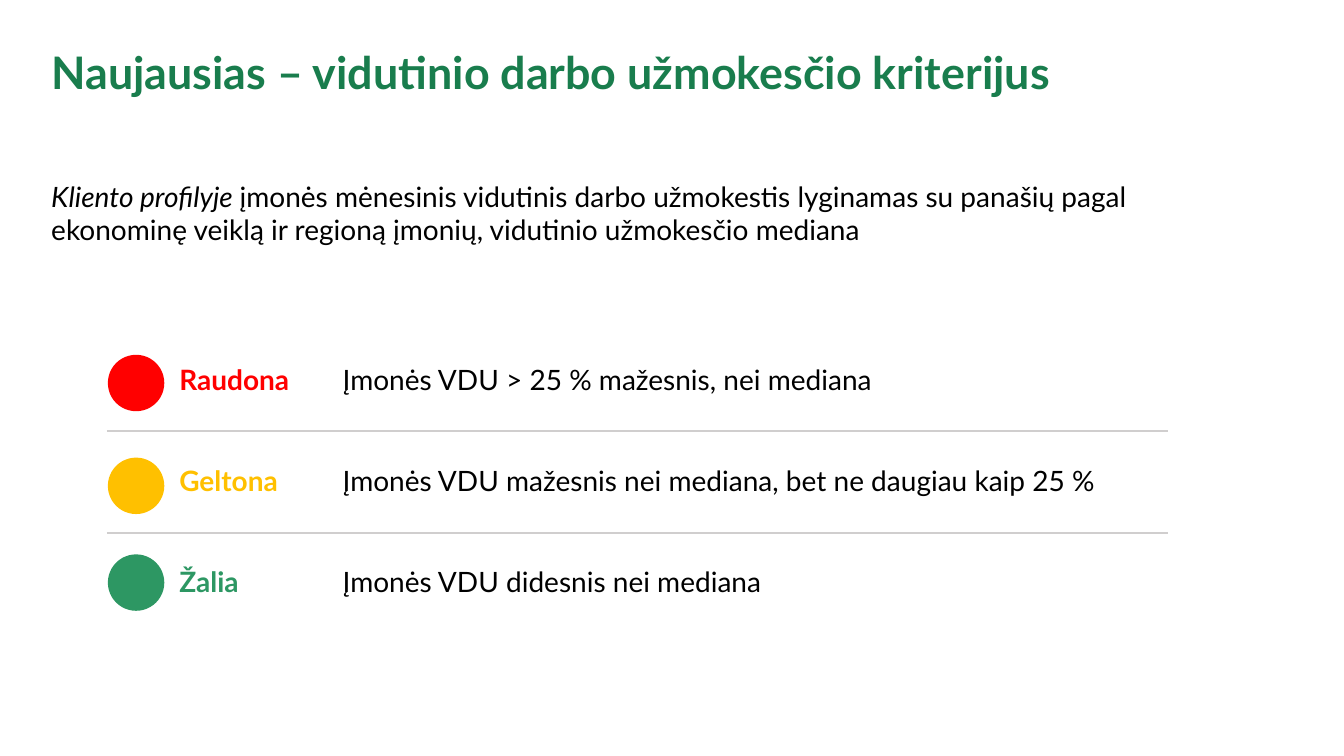
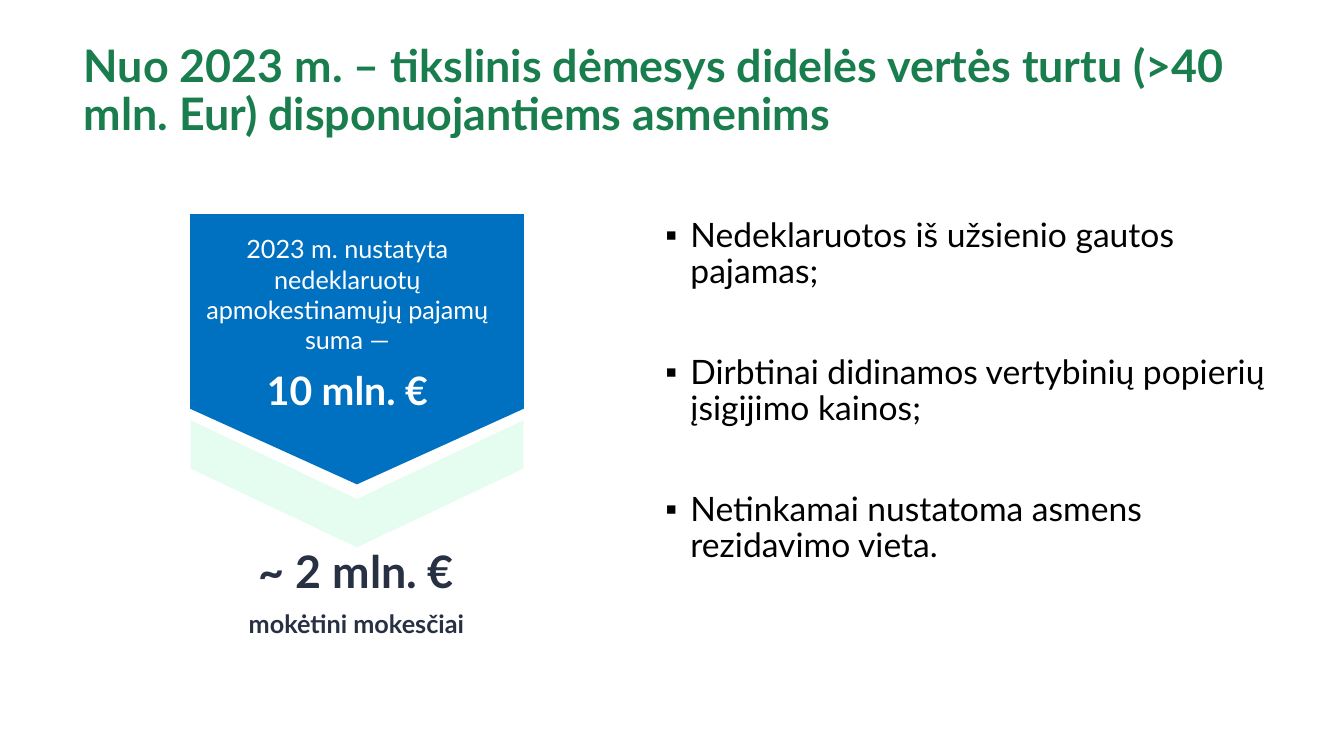
from lxml import etree
from pptx import Presentation
from pptx.dml.color import RGBColor
from pptx.enum import shapes, text
from pptx.oxml import ns
from pptx.util import Inches, Pt

FONT = "Lato"
TITLE_GREEN = "197D4D"
BLACK = "000000"
WHITE = "FFFFFF"
NAVY = "283043"
BLUE = "0070C0"
MINT = "E4FDF0"
GREY = "D0CECE"

LEVELS = [  # name, colour, top of the circle, description
    ("Raudona", "FF0000", 3.52, "Įmonės VDU > 25 % mažesnis, nei mediana"),
    ("Geltona", "FFC000", 4.54, "Įmonės VDU mažesnis nei mediana, bet ne daugiau kaip 25 %"),
    ("Žalia", "2D9763", 5.5, "Įmonės VDU didesnis nei mediana"),
]
FINDINGS = [
    "Nedeklaruotos iš užsienio gautos pajamas;",
    "Dirbtinai didinamos vertybinių popierių įsigijimo kainos;",
    "Netinkamai nustatoma asmens rezidavimo vieta.",
]


def rgb(value):
    return RGBColor.from_string(value)


def set_font(font, size, color, bold=False):
    font.name = FONT
    font.size = Pt(size)
    font.color.rgb = rgb(color)
    font.bold = bold


def add_property(parent, tag, **attributes):
    return etree.SubElement(parent, ns.qn(tag), attributes)


def add_titled_slide(presentation, title, left, top, width, height):
    slide = presentation.slides.add_slide(presentation.slide_layouts[5])
    shape = slide.shapes.title
    shape.left, shape.top = Inches(left), Inches(top)
    shape.width, shape.height = Inches(width), Inches(height)
    frame = shape.text_frame
    frame.text = title
    frame.word_wrap = True
    frame.auto_size = text.MSO_AUTO_SIZE.NONE
    frame.vertical_anchor = text.MSO_ANCHOR.MIDDLE
    paragraph = frame.paragraphs[0]
    paragraph.alignment = text.PP_ALIGN.LEFT
    paragraph.line_spacing = 0.9
    set_font(paragraph.font, 32, TITLE_GREEN, True)
    return slide


def add_text_frame(slide, left, top, width, height):
    box = slide.shapes.add_textbox(Inches(left), Inches(top), Inches(width), Inches(height))
    box.text_frame.word_wrap = True
    return box.text_frame


def add_paragraphs(frame, lines):
    """Fill the frame with one paragraph per line and return the paragraphs."""
    frame.text = "\n".join(lines)
    return frame.paragraphs


def add_filled_shape(slide, kind, left, top, width, height, color):
    shape = slide.shapes.add_shape(kind, Inches(left), Inches(top), Inches(width), Inches(height))
    shape.shadow.inherit = False
    shape.fill.solid()
    shape.fill.fore_color.rgb = rgb(color)
    shape.line.fill.background()
    return shape


def add_down_arrow(slide, kind, left, top, width, height, point, color):
    """Add a right-pointing preset turned to point down; point is its adjustment."""
    shape = add_filled_shape(slide, kind, left, top, width, height, color)
    shape.rotation = 90
    shape.adjustments[0] = point


def add_divider(slide, left, right, y):
    line = slide.shapes.add_connector(
        shapes.MSO_CONNECTOR.STRAIGHT, Inches(left), Inches(y), Inches(right), Inches(y))
    line.line.color.rgb = rgb(GREY)
    line.line.width = Pt(1.5)
    add_property(line._element.spPr, "a:effectLst")


def add_level(slide, text_top, name, color, circle_top, description):
    add_filled_shape(slide, shapes.MSO_SHAPE.OVAL, 1.07, circle_top, 0.56, 0.56, color)
    paragraph = add_text_frame(slide, 1.68, text_top, 9.6, 0.44).paragraphs[0]
    tabs = add_property(paragraph._p.get_or_add_pPr(), "a:tabLst")
    add_property(tabs, "a:tab", pos=str(Inches(1.62)), algn="l")
    for words, run_color, bold in ((name + "\t", color, True), (description, BLACK, False)):
        run = paragraph.add_run()
        run.text = words
        set_font(run.font, 20, run_color, bold)


def add_bullets(frame, lines, size, gap):
    for index, paragraph in enumerate(add_paragraphs(frame, lines)):
        paragraph.line_spacing = 0.9
        if index:
            paragraph.space_before = Pt(gap)
        properties = paragraph._p.get_or_add_pPr()
        properties.set("marL", str(Inches(0.25)))
        properties.set("indent", str(Inches(-0.25)))
        add_property(properties, "a:buFont", typeface="Arial")
        add_property(properties, "a:buChar", char="▪")
        set_font(paragraph.font, size, BLACK)


def add_figure(slide, left, top, width, height, color, lines):
    """Add centred lines, each given as (words, size, bold)."""
    frame = add_text_frame(slide, left, top, width, height)
    paragraphs = add_paragraphs(frame, [words for words, _, _ in lines])
    for paragraph, (_, size, bold) in zip(paragraphs, lines):
        paragraph.alignment = text.PP_ALIGN.CENTER
        paragraph.space_after = Pt(8)
        set_font(paragraph.font, size, color, bold)


def build_wage_slide(presentation):
    slide = add_titled_slide(
        presentation, "Naujausias – vidutinio darbo užmokesčio kriterijus",
        0.41, 0.42, 12.36, 0.64)
    paragraph = add_text_frame(slide, 0.41, 1.73, 11.74, 0.77).paragraphs[0]
    set_font(paragraph.font, 20, BLACK)
    source = paragraph.add_run()
    source.text = "Kliento profilyje "
    source.font.italic = True
    paragraph.add_run().text = (
        "įmonės mėnesinis vidutinis darbo užmokestis lyginamas su panašių pagal "
        "ekonominę veiklą ir regioną įmonių, vidutinio užmokesčio mediana")
    for y in (4.28, 5.29):
        add_divider(slide, 1.06, 11.58, y)
    for index, level in enumerate(LEVELS):
        add_level(slide, 3.55 + index, *level)


def build_assets_slide(presentation):
    slide = add_titled_slide(
        presentation,
        "Nuo 2023 m. – tikslinis dėmesys didelės vertės turtu (>40 mln. Eur) "
        "disponuojantiems asmenims",
        0.73, 0.19, 11.54, 1.45)
    add_bullets(add_text_frame(slide, 6.5, 2.12, 6.47, 4.76), FINDINGS, 24, 46)
    add_down_arrow(slide, shapes.MSO_SHAPE.PENTAGON, 2.2, 1.81, 2.68, 3.31, 0.28, BLUE)
    add_down_arrow(slide, shapes.MSO_SHAPE.CHEVRON, 2.91, 3.15, 1.26, 3.3, 0.62, MINT)
    add_figure(slide, 1.69, 2.27, 3.51, 1.9, WHITE, [
        ("2023 m. nustatyta nedeklaruotų apmokestinamųjų pajamų suma —", 18, False),
        ("10 mln. €", 28, True),
    ])
    add_figure(slide, 1.78, 5.34, 3.51, 1.05, NAVY, [
        ("~ 2 mln. €", 32, True),
        ("mokėtini mokesčiai", 18, True),
    ])


def main():
    presentation = Presentation()
    presentation.slide_width = Inches(13.33)
    presentation.slide_height = Inches(7.5)
    build_wage_slide(presentation)
    build_assets_slide(presentation)
    presentation.save("out.pptx")


if __name__ == "__main__":
    main()
